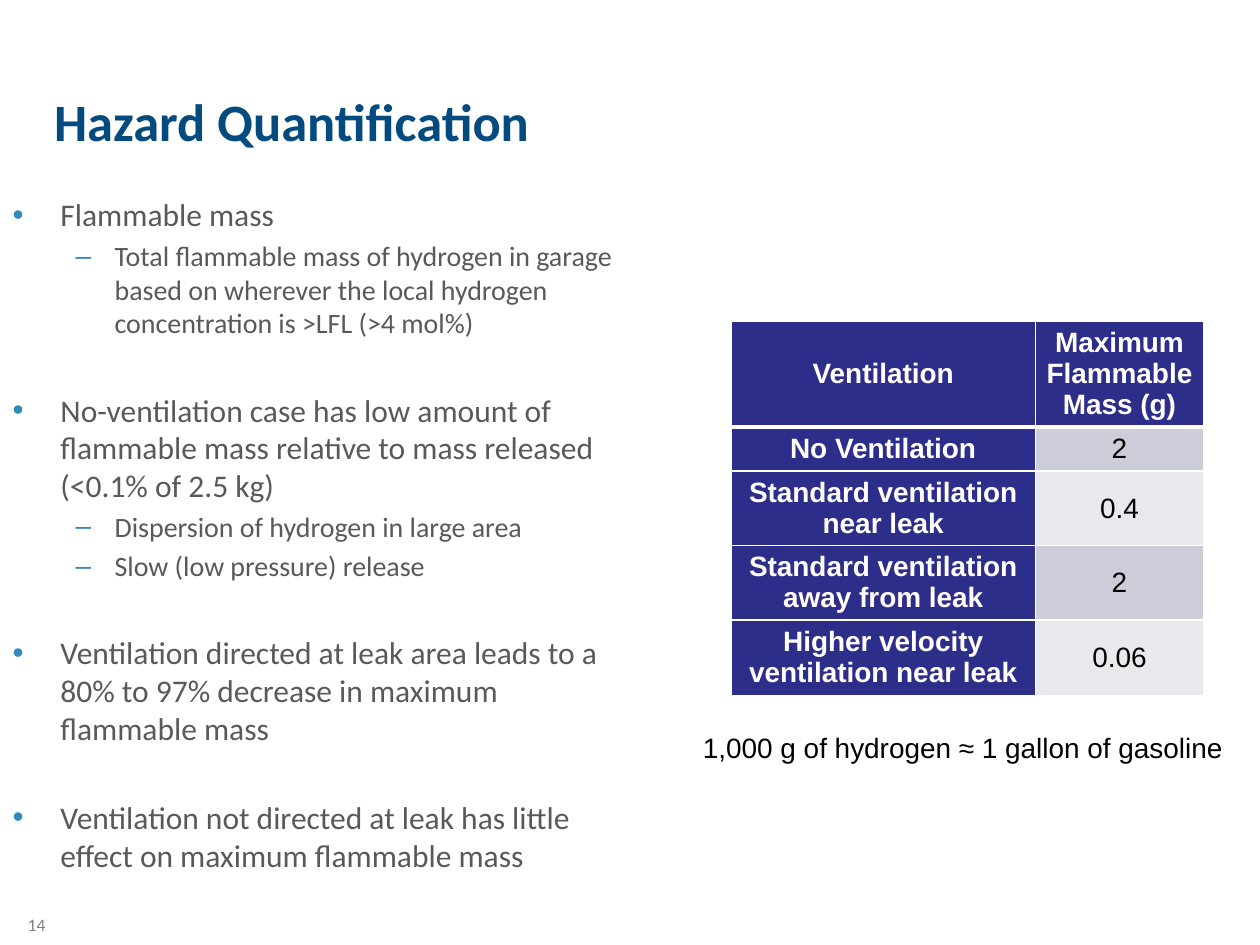
from typing import NamedTuple

from lxml.etree import SubElement
from pptx import Presentation
from pptx.dml.color import RGBColor
from pptx.enum.text import MSO_ANCHOR as ANCHOR, MSO_AUTO_SIZE as AUTO, PP_ALIGN as ALIGN
from pptx.oxml.ns import qn
from pptx.util import Inches, Pt

NAVY = RGBColor(0x03, 0x4B, 0x7F)
BULLET_BLUE = RGBColor(0x32, 0x8B, 0xB6)
BODY_GRAY = RGBColor(0x59, 0x59, 0x59)
PAGE_GRAY = RGBColor(0x80, 0x80, 0x80)
HEADER_BLUE = RGBColor(0x2D, 0x2D, 0x8A)
BANDS = (RGBColor(0xCD, 0xCD, 0xDA), RGBColor(0xE8, 0xE8, 0xED))
WHITE = RGBColor(0xFF, 0xFF, 0xFF)
BLACK = RGBColor(0, 0, 0)


class Level(NamedTuple):
    mark: str
    size: int
    left: float
    hanging: float


class Bullet(NamedTuple):
    text: str
    level: int = 0
    before: float = 3.6


LEVELS = (Level("•", 18, 0.38, 0.38), Level("–", 16, 0.81, 0.31))
GROUP_GAP = 29.2  # points before each new topic
SUB_GAP = 3.2

BULLETS = [
    Bullet("Flammable mass", before=0),
    Bullet("Total flammable mass of hydrogen in garage based on wherever "
           "the local hydrogen concentration is >LFL (>4 mol%)", 1, SUB_GAP),
    Bullet("No-ventilation case has low amount of flammable mass relative "
           "to mass released (<0.1% of 2.5 kg)", before=GROUP_GAP),
    Bullet("Dispersion of hydrogen in large area", 1, SUB_GAP),
    Bullet("Slow (low pressure) release", 1, SUB_GAP),
    Bullet("Ventilation directed at leak area leads to a 80% to 97% decrease "
           "in maximum flammable mass", before=GROUP_GAP),
    Bullet("Ventilation not directed at leak has little effect on maximum "
           "flammable mass", before=GROUP_GAP),
]

ROWS = [
    ("Ventilation", "Maximum Flammable Mass (g)"),
    ("No Ventilation", "2"),
    ("Standard ventilation near leak", "0.4"),
    ("Standard ventilation away from leak", "2"),
    ("Higher velocity ventilation near leak", "0.06"),
]
COL_WIDTHS = (2.42, 1.33)
ROW_HEIGHTS = (0.84, 0.35, 0.59, 0.59, 0.6)


def write(p, text: str, *, size: float, color: RGBColor, font: str = "Calibri",
          bold: bool = False, align=ALIGN.LEFT) -> None:
    p.alignment = align
    r = p.add_run()
    r.text = text
    r.font.name, r.font.size, r.font.bold = font, Pt(size), bold
    r.font.color.rgb = color


def place(sp, left: float, top: float, width: float, height: float) -> None:
    sp.left, sp.top = Inches(left), Inches(top)
    sp.width, sp.height = Inches(width), Inches(height)


def add_bullet(p, bullet: Bullet) -> None:
    level = LEVELS[bullet.level]
    p.level = bullet.level
    p.space_before = Pt(bullet.before)
    pPr = p._p.get_or_add_pPr()
    pPr.set("marL", str(Inches(level.left)))
    pPr.set("indent", str(-Inches(level.hanging)))
    clr = SubElement(pPr, qn("a:buClr"))
    SubElement(clr, qn("a:srgbClr"), val=str(BULLET_BLUE))
    SubElement(pPr, qn("a:buFont"), typeface="Arial")
    SubElement(pPr, qn("a:buChar"), char=level.mark)
    write(p, bullet.text, size=level.size, color=BODY_GRAY)


def set_borders(cell, **widths: float) -> None:
    tcPr = cell._tc.get_or_add_tcPr()
    for side in "LRTB":
        ln = SubElement(tcPr, qn(f"a:ln{side}"), w=str(Pt(widths.get(side, 1))))
        fill = SubElement(ln, qn("a:solidFill"))
        SubElement(fill, qn("a:srgbClr"), val=str(WHITE))


def fill_cell(cell, text: str, row: int, col: int) -> None:
    heading = row == 0 or col == 0
    set_borders(cell, T=3 if row == 1 else 1, B=3 if row == 0 else 1)
    cell.fill.solid()
    cell.fill.fore_color.rgb = HEADER_BLUE if heading else BANDS[(row - 1) % 2]
    cell.vertical_anchor = ANCHOR.MIDDLE
    cell.margin_left = cell.margin_right = Inches(0.05)
    cell.margin_top = cell.margin_bottom = Inches(0.03)
    write(cell.text_frame.paragraphs[0], text, size=16, font="Arial", bold=heading,
          color=WHITE if heading else BLACK, align=ALIGN.CENTER)


def main() -> None:
    prs = Presentation()
    prs.slide_width, prs.slide_height = Inches(10), Inches(7.5)
    s = prs.slides.add_slide(prs.slide_layouts[1])

    # Title
    title = s.shapes.title
    place(title, 0.33, 0.66, 9.33, 0.86)
    tf = title.text_frame
    tf.auto_size, tf.vertical_anchor = AUTO.NONE, ANCHOR.TOP
    write(tf.paragraphs[0], "Hazard Quantification", size=30, color=NAVY, bold=True)

    # Findings
    body = s.placeholders[1]
    place(body, 0, 1.5, 5, 5.58)
    tf = body.text_frame
    tf.auto_size, tf.vertical_anchor = AUTO.NONE, ANCHOR.TOP
    for i, bullet in enumerate(BULLETS):
        add_bullet(tf.add_paragraph() if i else tf.paragraphs[0], bullet)

    # Flammable mass table
    table = s.shapes.add_table(
        len(ROWS), len(COL_WIDTHS), Inches(5.8), Inches(2.55),
        Inches(sum(COL_WIDTHS)), Inches(sum(ROW_HEIGHTS))).table
    for column, width in zip(table.columns, COL_WIDTHS):
        column.width = Inches(width)
    for i, (values, height) in enumerate(zip(ROWS, ROW_HEIGHTS)):
        table.rows[i].height = Inches(height)
        for j, text in enumerate(values):
            fill_cell(table.cell(i, j), text, i, j)

    # Energy equivalence note
    note = s.shapes.add_textbox(Inches(5.48), Inches(5.75), Inches(4.38), Inches(0.37))
    note.text_frame.word_wrap = False
    write(note.text_frame.paragraphs[0], "1,000 g of hydrogen ≈ 1 gallon of gasoline",
          size=16, color=BLACK, font="Arial")

    # Page number
    page = s.shapes.add_textbox(Inches(0), Inches(7.21), Inches(0.58), Inches(0.25))
    tf = page.text_frame
    tf.word_wrap, tf.vertical_anchor = True, ANCHOR.MIDDLE
    write(tf.paragraphs[0], "14", size=10, color=PAGE_GRAY, align=ALIGN.CENTER)

    prs.save("out.pptx")


if __name__ == "__main__":
    main()
